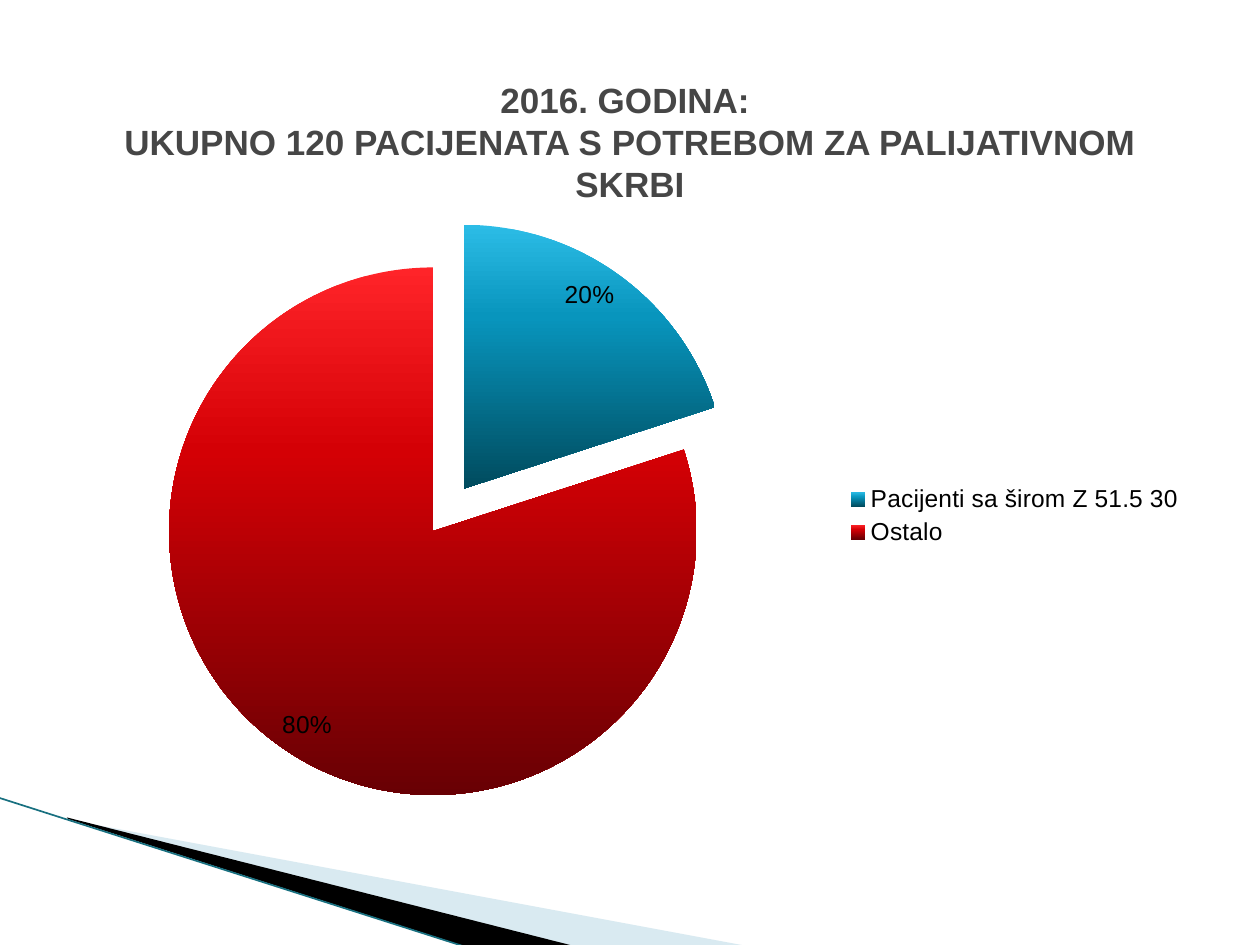
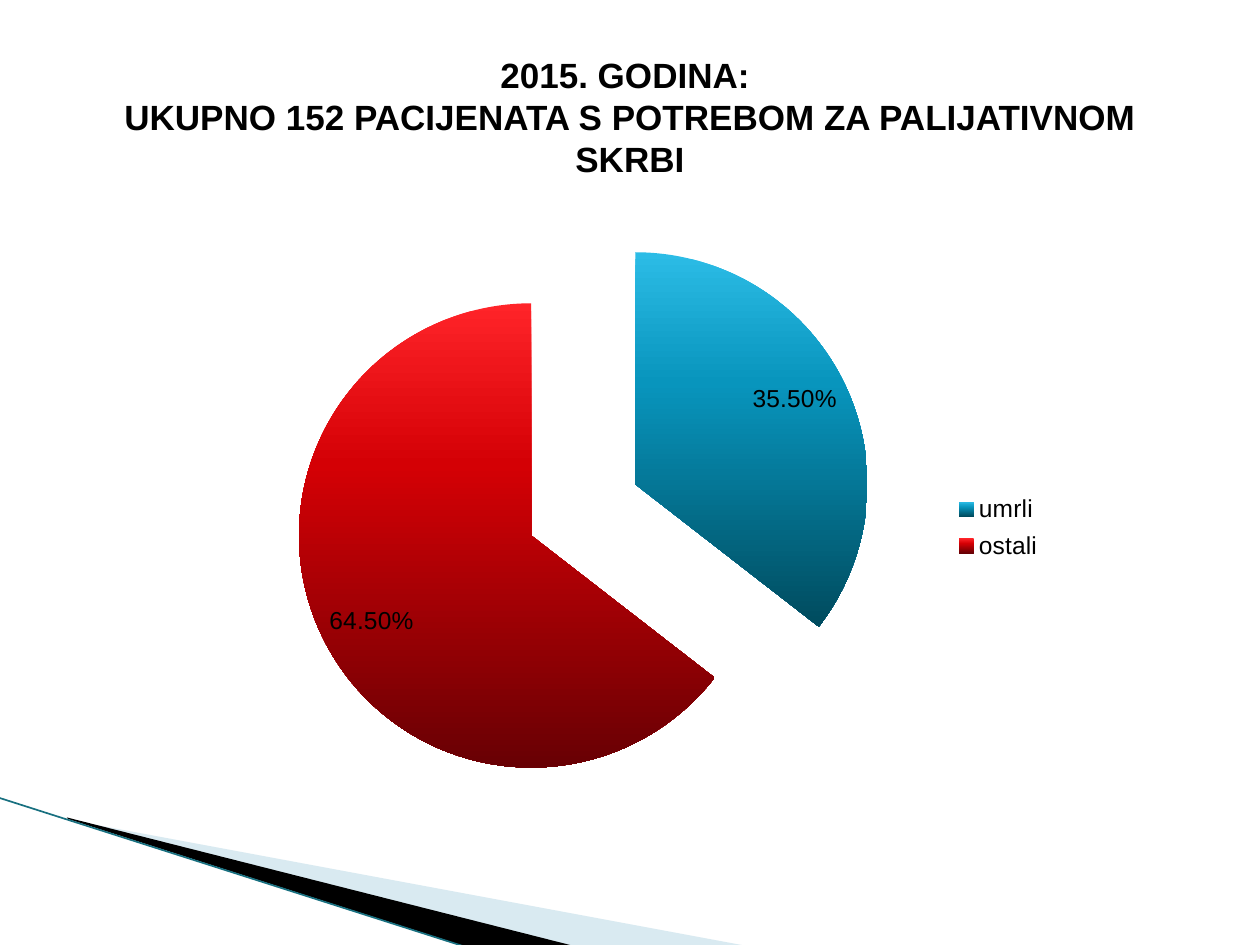
from copy import deepcopy

from lxml import etree
from pptx import Presentation, util as u
from pptx.chart import data
from pptx.dml import color
from pptx.enum import chart as chart_enum, shapes, text
from pptx.oxml.ns import qn

COLORS = {
    "background": "FFFFFF",
    "pale_wedge": "A0CBDC",
    "dark_wedge": "000000",
    "edge": "187080",
    "gray_title": "464646",
    "black": "000000",
}
SLICE_GRADIENTS = [
    [(0, "2CBCE6"), (0.35, "0895BD"), (1, "004B5E")],
    [(0, "FF2429"), (0.35, "D40005"), (1, "680004")],
]
FONT = "Arial"
PIE_SIDE = 11.7
PIE_TOP = 0.32


def rgb(name):
    return color.RGBColor.from_string(COLORS[name])


def format_font(font, size=14, color_name="black", bold=False):
    font.name = FONT
    font.size = u.Pt(size)
    font.bold = bold
    font.color.rgb = rgb(color_name)


def add_text(slide, content, box, **font_format):
    shape = slide.shapes.add_textbox(*map(u.Cm, box))
    frame = shape.text_frame
    frame.word_wrap = True
    frame.vertical_anchor = text.MSO_ANCHOR.MIDDLE
    paragraph = frame.paragraphs[0]
    paragraph.text = content
    paragraph.alignment = text.PP_ALIGN.CENTER
    for run in paragraph.runs:
        format_font(run.font, **font_format)


def add_wedge(slide, left, top, points, color_name, opacity=100):
    corners = [(u.Cm(left + x), u.Cm(top + y)) for x, y in points]
    builder = slide.shapes.build_freeform(*corners[0])
    builder.add_line_segments(corners[1:], close=True)
    wedge = builder.convert_to_shape()
    wedge.shadow.inherit = False
    wedge.fill.solid()
    wedge.fill.fore_color.rgb = rgb(color_name)
    wedge.line.fill.background()
    if opacity < 100:
        fill_color = next(wedge.element.spPr.iter(qn("a:srgbClr")))
        etree.SubElement(fill_color, qn("a:alpha"), val=str(opacity * 1000))


def add_corner_band(slide, left=0, top=16.08):
    add_wedge(slide, left, top,
              [(1.4, 0.45), (15.11, 3), (11.58, 3), (1.4, 0.43)],
              "pale_wedge", opacity=40)
    add_wedge(slide, left, top,
              [(1.35, 0.4), (11.61, 3), (9.45, 3.02), (1.37, 0.43)],
              "dark_wedge")
    edge = slide.shapes.add_connector(
        shapes.MSO_CONNECTOR.STRAIGHT, u.Cm(left - 0.03), u.Cm(top),
        u.Cm(left + 9.42), u.Cm(top + 3.02))
    edge.line.color.rgb = rgb("edge")
    edge.line.width = u.Pt(0.95)
    etree.SubElement(edge.element.spPr, qn("a:effectLst"))


def set_layout(parent, index, area, chart_size, inner=False):
    for old_layout in parent.findall(qn("c:layout")):
        parent.remove(old_layout)
    layout = etree.Element(qn("c:layout"))
    manual = etree.SubElement(layout, qn("c:manualLayout"))
    settings = [("layoutTarget", "inner")] if inner else []
    settings += [("xMode", "edge"), ("yMode", "edge")]
    settings += [(name, f"{length / chart_size[i % 2]:.4f}")
                 for i, (name, length) in enumerate(zip("xywh", area))]
    for name, value in settings:
        etree.SubElement(manual, qn(f"c:{name}"), val=value)
    parent.insert(index, layout)


def fill_slice(point, chart, stops):
    fill = point.format.fill
    fill.gradient()
    fill.gradient_angle = 270
    stop_list = list(chart.element.iter(qn("a:gsLst")))[-1]
    stop_list.insert(1, deepcopy(stop_list[0]))
    for stop, (position, hex_color) in zip(fill.gradient_stops, stops):
        stop.position = position
        stop.color.rgb = color.RGBColor.from_string(hex_color)
    point.format.line.fill.background()


def add_pie(slide, box, slices, pie_left, explosion, number_format,
            as_percent=False, legend_area=None):
    chart_data = data.CategoryChartData()
    chart_data.categories = list(slices)
    chart_data.add_series("Series 1", list(slices.values()))
    chart = slide.shapes.add_chart(
        chart_enum.XL_CHART_TYPE.PIE, *map(u.Cm, box), chart_data).chart
    format_font(chart.font)
    chart.has_title = False
    chart.has_legend = True
    legend = chart.legend
    legend.position = chart_enum.XL_LEGEND_POSITION.RIGHT
    legend.include_in_layout = False
    format_font(legend.font)

    plot = chart.plots[0]
    plot.vary_by_categories = True
    plot.has_data_labels = True
    labels = plot.data_labels
    labels.show_value = not as_percent
    labels.show_percentage = as_percent
    labels.number_format = number_format
    labels.number_format_is_linked = False
    labels.position = chart_enum.XL_LABEL_POSITION.INSIDE_END
    format_font(labels.font)

    for index, stops in enumerate(SLICE_GRADIENTS):
        fill_slice(plot.series[0].points[index], chart, stops)
    first_point = next(chart.element.iter(qn("c:dPt")))
    offset = etree.Element(qn("c:explosion"), val=str(explosion))
    first_point.addprevious(offset)

    plot_area = next(chart.element.iter(qn("c:plotArea")))
    pie_area = (pie_left, PIE_TOP, PIE_SIDE, PIE_SIDE)
    set_layout(plot_area, 0, pie_area, box[2:], inner=True)
    if legend_area:
        legend_element = next(chart.element.iter(qn("c:legend")))
        set_layout(legend_element, 1, legend_area, box[2:])


def add_year_slide(presentation, year, total, title_top, title_color,
                   chart_width, **pie):
    slide = presentation.slides.add_slide(presentation.slide_layouts[6])
    slide.background.fill.solid()
    slide.background.fill.fore_color.rgb = rgb("background")
    add_corner_band(slide)
    add_pie(slide, (1.27, 4.11, chart_width, 12.57), **pie)
    title = (f"{year}. GODINA: \vUKUPNO {total} PACIJENATA "
             "S POTREBOM ZA PALIJATIVNOM SKRBI")
    add_text(slide, title, (1.27, title_top, 22.86, 3.18),
             size=20, color_name=title_color, bold=True)


def main():
    presentation = Presentation()
    presentation.slide_width = u.Cm(25.4)
    presentation.slide_height = u.Cm(19.05)
    add_year_slide(
        presentation, 2016, 120, 1.27, "gray_title", 22.86,
        slices={"Pacijenti sa širom Z 51.5 30": 20, "Ostalo": 80},
        pie_left=1.92, explosion=10, number_format="0%", as_percent=True)
    add_year_slide(
        presentation, 2015, 152, 0.76, "black", 23.29,
        slices={"umrli": 0.355, "ostali": 0.645},
        pie_left=4.64, explosion=25, number_format="0.00%",
        legend_area=(17.8, 5.7, 2.1, 1.65))
    presentation.save("out.pptx")


if __name__ == "__main__":
    main()
